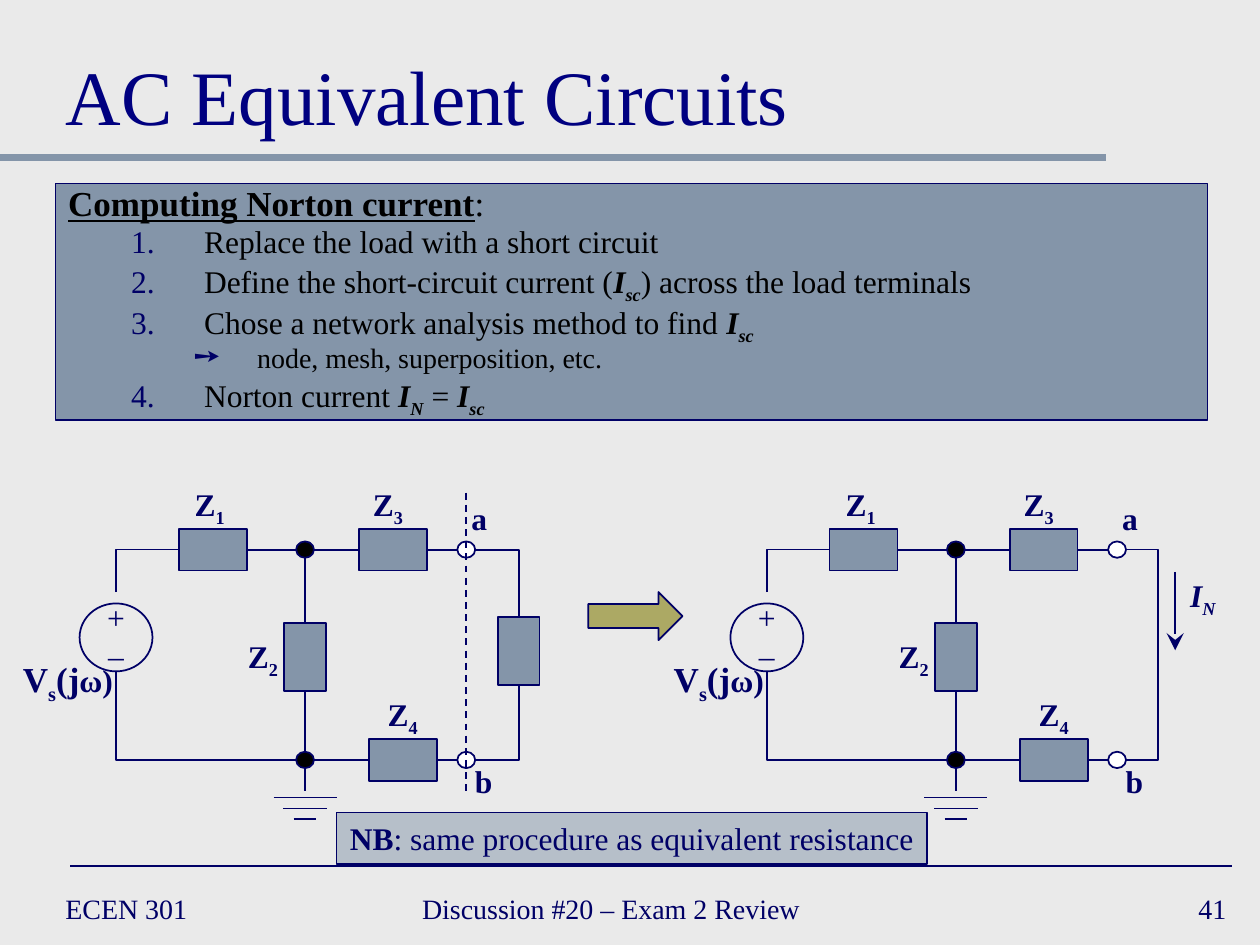
from dataclasses import dataclass

from pptx import Presentation
from pptx.dml.color import RGBColor
from pptx.enum.dml import MSO_LINE
from pptx.enum.shapes import MSO_CONNECTOR, MSO_SHAPE
from pptx.enum.text import MSO_ANCHOR, MSO_AUTO_SIZE, PP_ALIGN
from pptx.oxml.xmlchemy import OxmlElement
from pptx.util import Cm, Pt


@dataclass(frozen=True)
class Theme:
    font: str = "Times New Roman"
    bg: str = "EAEAEA"
    ink: str = "000066"
    title: str = "000080"
    black: str = "000000"
    white: str = "FFFFFF"
    steel: str = "8495A9"
    olive: str = "ACA964"
    title_size: int = 44
    head_size: int = 20
    text_size: int = 18
    small_size: int = 16


T = Theme()

# Run styles: b bold, i italic, u underline, _ subscript
TITLE = "AC Equivalent Circuits"
ISC = [("I", "bi"), ("sc", "bi_")]
STEPS = [  # level, runs
    (0, [("Computing Norton current", "bu"), (":", "")]),
    (1, [("Replace the load with a short circuit", "")]),
    (1, [("Define the short-circuit current (", ""), *ISC, (") across the load terminals", "")]),
    (1, [("Chose a network analysis method to find ", ""), *ISC]),
    (2, [("node, mesh, superposition, etc.", "")]),
    (1, [("Norton current ", ""), ("I", "bi"), ("N", "bi_"), (" = ", ""), *ISC]),
]
LEVELS = [  # size, left margin, indent, bullet tag, bullet attributes
    (T.head_size, 1.7, -1.7, "a:buNone", {}),
    (T.text_size, 2.74, -1.47, "a:buAutoNum", {"type": "arabicPeriod"}),
    (T.small_size, 3.81, -1.27, "a:buChar", {"char": "➙"}),
]
NOTE = [("NB", "b"), (": same procedure as equivalent resistance", "")]
FOOTER = [  # left, width, text, alignment
    (1.07, 5.51, "ECEN 301", PP_ALIGN.LEFT),
    (8.26, 9.73, "Discussion #20 – Exam 2 Review", PP_ALIGN.LEFT),
    (19.69, 5.28, "41", PP_ALIGN.RIGHT),
]

# Circuit geometry in cm, for the left circuit
TOP, BOTTOM = 11.08, 15.32
SRC, NODE, TERM, LOAD, SHORT = 2.34, 6.15, 9.4, 10.46, 10.22
DOT_W, DOT_H = 0.36, 0.33
BOX_W, BOX_H = 1.37, 0.84
Z1, Z3, Z4 = 4.29, 7.92, 8.13
Z2_Y, LOAD_Y = 13.25, 13.12
SRC_Y, SRC_W, SRC_H = 12.85, 1.47, 1.37
SHIFT = 13.12
RX, RY, HALF = DOT_W / 2, DOT_H / 2, BOX_W / 2

WIRES = [
    [(SRC, 11.94), (SRC, TOP), (Z1 - HALF, TOP)],
    [(Z1 + HALF, TOP), (NODE - RX, TOP)],
    [(NODE + RX, TOP), (Z3 - HALF, TOP)],
    [(Z3 + HALF, TOP), (TERM - RX, TOP)],
    [(NODE, TOP + RY), (NODE, Z2_Y - HALF)],
    [(NODE, Z2_Y + HALF), (NODE, BOTTOM - RY)],
    [(SRC, SRC_Y + SRC_H / 2), (SRC, BOTTOM), (NODE - RX, BOTTOM)],
    [(NODE + RX, BOTTOM), (Z4 - HALF, BOTTOM)],
    [(Z4 + HALF, BOTTOM), (TERM - RX, BOTTOM)],
    [(NODE, BOTTOM), (NODE, 15.95)],
] + [[(NODE - w / 2, y), (NODE + w / 2, y)] for w, y in ((1.27, 16.08), (0.88, 16.3), (0.46, 16.51))]
LOAD_WIRES = [
    [(TERM + RX, TOP), (LOAD, TOP), (LOAD, LOAD_Y - HALF)],
    [(TERM + RX, BOTTOM), (LOAD, BOTTOM), (LOAD, LOAD_Y + HALF)],
]
SHORT_WIRES = [[(TERM + RX, TOP), (SHORT, TOP), (SHORT, BOTTOM), (TERM + RX, BOTTOM)]]
IMPEDANCES = [(Z1, TOP, 0), (Z3, TOP, 0), (NODE, Z2_Y, 270), (Z4, BOTTOM, 0)]
LABELS = [  # centre, top, width, size, paragraphs
    (4.23, 9.65, 1.3, T.text_size, [[("Z", "b"), ("1", "b_")]]),
    (5.3, 12.71, 1.14, T.text_size, [[("Z", "b"), ("2", "b_")]]),
    (7.82, 9.65, 1.3, T.text_size, [[("Z", "b"), ("3", "b_")]]),
    (8.12, 13.89, 1.3, T.text_size, [[("Z", "b"), ("4", "b_")]]),
    (9.66, 9.93, 0.84, T.text_size, [[("a", "b")]]),
    (9.75, 15.24, 0.86, T.text_size, [[("b", "b")]]),
    (1.37, 13.13, 2.34, T.head_size, [[("V", "b"), ("s", "b_"), ("(j", "b"), ("ω)", "b", T.text_size)]]),
    (SRC, 11.94, 0.86, T.text_size, [[("+", "")], [("–", "")]]),
]
CURRENT_LABEL = (11.13, 11.48, 1.07, T.text_size, [[("I", "bi"), ("N", "bi_")]])


def rgb(value):
    return RGBColor.from_string(value)


def add_runs(p, runs, size, color=T.ink):
    for text, style, *own_size in runs:
        r = p.add_run()
        r.text = text
        f = r.font
        f.name, f.size, f.color.rgb = T.font, Pt(own_size[0] if own_size else size), rgb(color)
        f.bold, f.italic, f.underline = "b" in style, "i" in style, "u" in style
        if "_" in style:
            r._r.get_or_add_rPr().set("baseline", "-25000")


def add_text(shapes, x, y, w, h, paragraphs, size, align=PP_ALIGN.CENTER, wrap=False):
    tf = shapes.add_textbox(Cm(x), Cm(y), Cm(w), Cm(h)).text_frame
    tf.word_wrap = wrap
    for n, runs in enumerate(paragraphs):
        p = tf.add_paragraph() if n else tf.paragraphs[0]
        p.alignment = align
        add_runs(p, runs, size)
    return tf


def add_line(shapes, start, end, color=T.ink, width=1):
    line = shapes.add_connector(MSO_CONNECTOR.STRAIGHT, *(Cm(v) for v in (*start, *end)))
    line.line.color.rgb, line.line.width = rgb(color), Pt(width)
    line._element.spPr.append(OxmlElement("a:effectLst"))
    return line


def style_shape(sp, fill=None, width=1):
    sp.shadow.inherit = False
    if fill:
        sp.fill.solid()
        sp.fill.fore_color.rgb = rgb(fill)
    else:
        sp.fill.background()
    sp.line.color.rgb, sp.line.width = rgb(T.ink), Pt(width)
    return sp


def add_centred(shapes, kind, x, y, w, h, fill=None):
    sp = shapes.add_shape(kind, Cm(x - w / 2), Cm(y - h / 2), Cm(w), Cm(h))
    return style_shape(sp, fill)


def add_circuit(s, dx, wires, impedances, labels):
    shapes = s.shapes.add_group_shape().shapes
    for wire in wires:
        points = [(x + dx, y) for x, y in wire]
        if len(points) == 2:
            add_line(shapes, *points)
        else:
            corners = [(Cm(x), Cm(y)) for x, y in points]
            fb = shapes.build_freeform(*corners[0])
            fb.add_line_segments(corners[1:], close=False)
            style_shape(fb.convert_to_shape())
    for y in (TOP, BOTTOM):
        for x, fill in ((NODE, T.black), (TERM, T.white)):
            add_centred(shapes, MSO_SHAPE.OVAL, x + dx, y, DOT_W, DOT_H, fill)
    add_centred(shapes, MSO_SHAPE.OVAL, SRC + dx, SRC_Y, SRC_W, SRC_H)
    for x, y, turn in impedances:
        add_centred(shapes, MSO_SHAPE.RECTANGLE, x + dx, y, BOX_W, BOX_H, T.steel).rotation = turn
    for x, y, w, size, paragraphs in labels:
        add_text(shapes, x + dx - w / 2, y, w, 1.02 * len(paragraphs), paragraphs, size)
    return shapes


def place(sp, x, y, w, h):
    sp.left, sp.top, sp.width, sp.height = Cm(x), Cm(y), Cm(w), Cm(h)
    sp.text_frame.auto_size = MSO_AUTO_SIZE.NONE
    return sp.text_frame


def fill_steps(tf):
    for n, (level, runs) in enumerate(STEPS):
        size, margin, indent, tag, attrs = LEVELS[level]
        p = tf.add_paragraph() if n else tf.paragraphs[0]
        p.level, p.line_spacing, p.space_before = level, 0.8, Pt(0.2 * size if n else 0)
        pPr = p._p.get_or_add_pPr()
        pPr.set("marL", str(Cm(margin)))
        pPr.set("indent", str(Cm(indent)))
        color, clr = OxmlElement("a:buClr"), OxmlElement("a:srgbClr")
        clr.set("val", T.ink)
        color.append(clr)
        font, bullet = OxmlElement("a:buFont"), OxmlElement(tag)
        font.set("typeface", T.font)
        for key, value in attrs.items():
            bullet.set(key, value)
        for element in (color, font, bullet):
            pPr.append(element)
        add_runs(p, runs, size, T.black)


def main():
    prs = Presentation()
    prs.slide_width, prs.slide_height = Cm(25.4), Cm(19.05)
    s = prs.slides.add_slide(prs.slide_layouts[1])
    s.background.fill.solid()
    s.background.fill.fore_color.rgb = rgb(T.bg)

    add_line(s.shapes, (0, 3.18), (22.3, 3.18), T.steel, 4)
    add_line(s.shapes, (1.42, 17.46), (24.84, 17.46))
    for x, w, text, align in FOOTER:
        tf = add_text(s.shapes, x, 17.78, w, 1.07, [[(text, "")]], T.small_size, align, True)
        tf.vertical_anchor = MSO_ANCHOR.MIDDLE

    tf = place(s.shapes.title, 1.07, 0.43, 23.29, 2.54)
    tf.vertical_anchor = MSO_ANCHOR.BOTTOM
    tf.paragraphs[0].alignment = PP_ALIGN.LEFT
    add_runs(tf.paragraphs[0], [(TITLE, "")], T.title_size, T.title)
    body = s.placeholders[1]
    fill_steps(place(body, 1.12, 3.7, 23.22, 4.77))
    style_shape(body, T.steel, 0.75)

    left = add_circuit(s, 0, WIRES + LOAD_WIRES, IMPEDANCES + [(LOAD, LOAD_Y, 270)], LABELS)
    add_line(left, (TERM, 9.93), (TERM, 15.95)).line.dash_style = MSO_LINE.DASH
    right = add_circuit(s, SHIFT, WIRES + SHORT_WIRES, IMPEDANCES, LABELS + [CURRENT_LABEL])
    arrow = add_line(right, (10.57 + SHIFT, 11.53), (10.57 + SHIFT, 13.11))
    tail = OxmlElement("a:tailEnd")
    for key, value in (("type", "stealth"), ("w", "lg"), ("len", "lg")):
        tail.set(key, value)
    arrow.line._get_or_add_ln().append(tail)

    note = add_centred(s.shapes, MSO_SHAPE.RECTANGLE, 12.74, 16.9, 11.91, 1.04, T.steel)
    alpha = OxmlElement("a:alpha")
    alpha.set("val", "50000")
    note._element.spPr.find(".//{*}solidFill/{*}srgbClr").append(alpha)
    note.text_frame.word_wrap = False
    note.text_frame.paragraphs[0].alignment = PP_ALIGN.CENTER
    add_runs(note.text_frame.paragraphs[0], NOTE, T.text_size)
    add_centred(s.shapes, MSO_SHAPE.RIGHT_ARROW, 12.81, 12.42, 1.9, 0.97, T.olive)
    prs.save("out.pptx")


if __name__ == "__main__":
    main()
